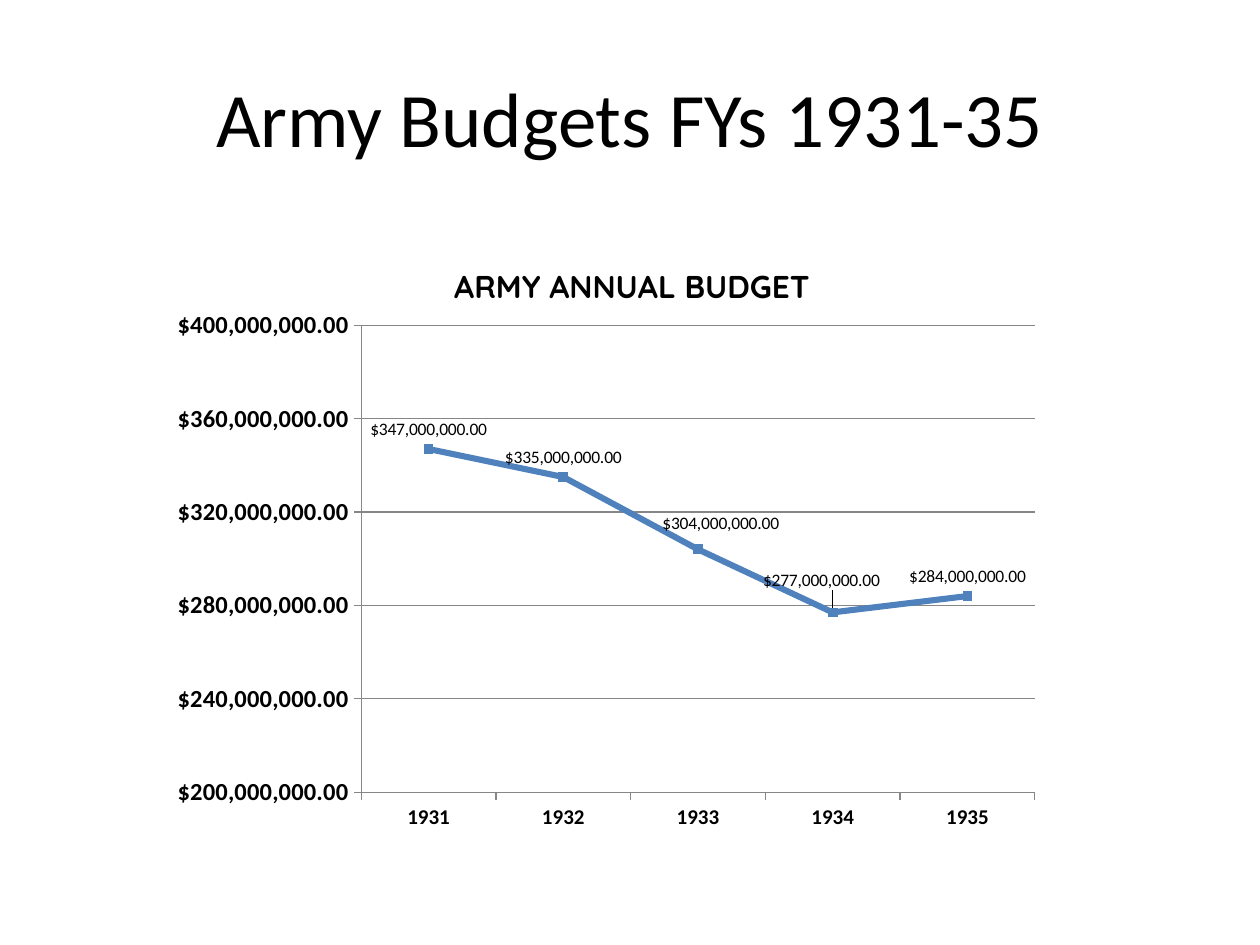
"""Build the slide on Army budgets for fiscal years 1931 to 1935."""
from dataclasses import dataclass

from lxml import etree
from pptx import Presentation
from pptx import util as u
from pptx.chart.data import CategoryChartData
from pptx.dml.color import RGBColor
from pptx.enum import chart as ce, text
from pptx.oxml.ns import qn

BLACK = RGBColor(0x00, 0x00, 0x00)
BLUE = RGBColor(0x4F, 0x81, 0xBD)
GREY = RGBColor(0x86, 0x86, 0x86)
WIDTH, HEIGHT = u.Inches(10), u.Inches(7.5)
MARGIN = 0.05
MILLION = 1_000_000
DOLLARS = '"$"#,##0.00;[Red]"$"#,##0.00'


@dataclass(frozen=True)
class Budget:
    """A year's budget in millions, with its label's shift as shares of the chart."""
    year: str
    millions: int
    shift_x: float = 0
    shift_y: float = 0


BUDGETS = [
    Budget("1931", 347),
    Budget("1932", 335),
    Budget("1933", 304, 0.02, -0.01),
    Budget("1934", 277, -0.01, -0.02),
    Budget("1935", 284),
]


def format_font(font, size: float, bold: bool = False, name: str = "Calibri") -> None:
    """Set the look of a font."""
    font.size, font.bold, font.name = u.Pt(size), bold, name
    font.color.rgb = BLACK


def write(frame, content: str, **style) -> None:
    """Put one centred, formatted line of text in a text frame."""
    paragraph = frame.paragraphs[0]
    paragraph.alignment = text.PP_ALIGN.CENTER
    run = paragraph.add_run()
    run.text = content
    format_font(run.font, **style)


def set_layout(element, index: int, **settings) -> None:
    """Give a chart part a manual layout."""
    for old in element.findall(qn("c:layout")):
        element.remove(old)
    layout = etree.Element(qn("c:layout"))
    manual = etree.SubElement(layout, qn("c:manualLayout"))
    for key, value in settings.items():
        etree.SubElement(manual, qn(f"c:{key}")).set("val", str(value))
    element.insert(index, layout)


def format_axis(axis, size: float) -> None:
    """Style an axis with bold labels and outer ticks."""
    format_font(axis.tick_labels.font, size, bold=True)
    axis.major_tick_mark = ce.XL_TICK_MARK.OUTSIDE
    axis.minor_tick_mark = ce.XL_TICK_MARK.NONE
    axis.format.line.color.rgb = GREY
    axis.format.line.width = u.Pt(0.75)


def format_series(series) -> None:
    """Style the budget line, its markers and its labels."""
    series.smooth = False
    series.format.line.color.rgb = BLUE
    series.format.line.width = u.Pt(3.5)
    marker = series.marker
    marker.style, marker.size = ce.XL_MARKER_STYLE.SQUARE, 5
    marker.format.fill.solid()
    marker.format.fill.fore_color.rgb = BLUE
    marker.format.line.color.rgb = BLUE
    for index in range(len(BUDGETS)):
        label = series.points[index].data_label
        format_font(label.font, 10)
        label.position = ce.XL_LABEL_POSITION.ABOVE


def add_budget_chart(slide) -> None:
    """Add the line chart of annual budgets."""
    data = CategoryChartData(number_format=DOLLARS)
    data.categories = [budget.year for budget in BUDGETS]
    data.add_series("Series 1", [budget.millions * MILLION for budget in BUDGETS])
    chart = slide.shapes.add_chart(
        ce.XL_CHART_TYPE.LINE_MARKERS, int(WIDTH * MARGIN), u.Inches(1.75),
        int(WIDTH * (1 - 2 * MARGIN)), int(HEIGHT * 0.66), data).chart
    chart.has_legend = False
    format_font(chart.font, 10)
    chart.plots[0].vary_by_categories = False
    write(chart.chart_title.text_frame, "ARMY ANNUAL BUDGET",
          size=18, bold=True, name="Quicksand")
    format_axis(chart.category_axis, 12)
    values = chart.value_axis
    format_axis(values, 14)
    values.minimum_scale, values.maximum_scale = 200 * MILLION, 400 * MILLION
    values.major_unit = 40 * MILLION
    values.tick_labels.number_format = DOLLARS
    values.tick_labels.number_format_is_linked = False
    values.has_major_gridlines = True
    values.major_gridlines.format.line.color.rgb = GREY
    values.major_gridlines.format.line.width = u.Pt(0.75)
    format_series(chart.plots[0].series[0])

    set_layout(chart.chart_title.element, 1, xMode="edge", yMode="edge", x=0.34, y=0.06)
    set_layout(chart.element.xpath("//c:plotArea")[0], 0, layoutTarget="inner",
               xMode="edge", yMode="edge", x=0.263, y=0.168, w=0.594, h=0.749)
    for label, budget in zip(chart.element.xpath("//c:dLbl"), BUDGETS):
        if budget.shift_x or budget.shift_y:
            set_layout(label, 1, x=budget.shift_x, y=budget.shift_y)


def main() -> None:
    """Create and save the presentation."""
    presentation = Presentation()
    presentation.slide_width, presentation.slide_height = WIDTH, HEIGHT
    slide = presentation.slides.add_slide(presentation.slide_layouts[5])
    title = slide.shapes.title
    title.left, title.top = int(WIDTH * MARGIN), int(HEIGHT * 0.04)
    title.width, title.height = int(WIDTH * (1 - 2 * MARGIN)), u.Inches(1.25)
    title.text_frame.vertical_anchor = text.MSO_ANCHOR.MIDDLE
    write(title.text_frame, "Army Budgets FYs 1931-35", size=44)
    add_budget_chart(slide)
    presentation.save("out.pptx")


if __name__ == "__main__":
    main()
